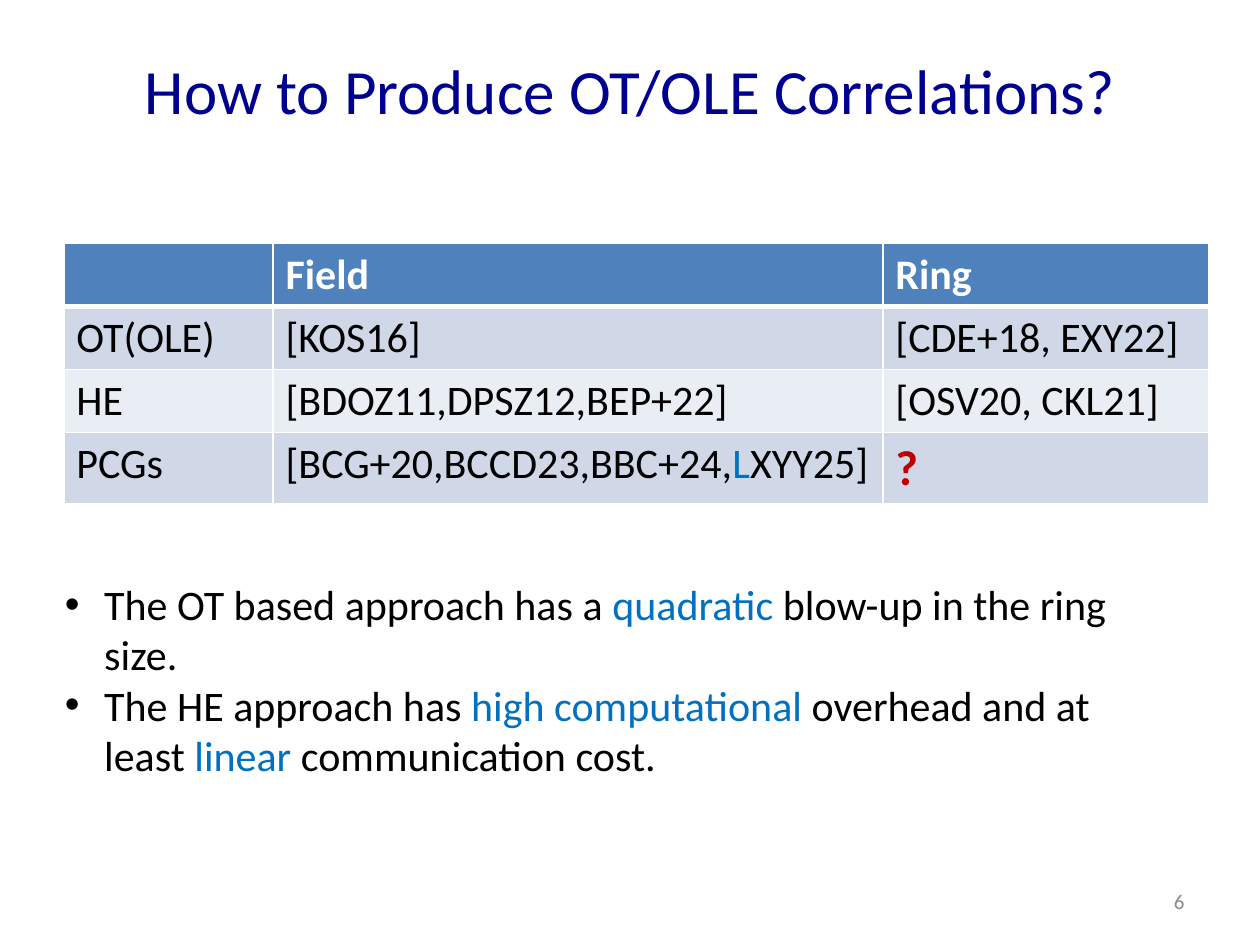
from dataclasses import dataclass

from lxml import etree
from pptx import Presentation
from pptx.dml.color import RGBColor
from pptx.enum.text import MSO_ANCHOR, PP_ALIGN
from pptx.oxml.ns import qn
from pptx.util import Pt

LEFT, CENTER, RIGHT = PP_ALIGN.LEFT, PP_ALIGN.CENTER, PP_ALIGN.RIGHT
TOP, MIDDLE = MSO_ANCHOR.TOP, MSO_ANCHOR.MIDDLE


@dataclass(frozen=True)
class Theme:
    font: str = "Calibri"
    title: str = "000090"
    text: str = "000000"
    accent: str = "0070C0"
    alert: str = "C00000"
    muted: str = "8C8C8C"
    white: str = "FFFFFF"
    header: str = "4F81BD"
    bands: tuple = ("D0D8E8", "E9EDF4")
    title_size: int = 36
    body_size: int = 24
    alert_size: int = 28
    number_size: int = 12


theme = Theme()


def add_runs(paragraph, parts, size=theme.body_size, bold=False):
    """Add (text, colour) parts to a paragraph."""
    for text, color in parts:
        run = paragraph.add_run()
        run.text = text
        run.font.name = theme.font
        run.font.size = Pt(size)
        run.font.bold = bold
        run.font.color.rgb = RGBColor.from_string(color)


def add_text_box(left, top, width, height, anchor, align, paragraphs, size):
    shape = slide.shapes.add_textbox(Pt(left), Pt(top), Pt(width), Pt(height))
    text_frame = shape.text_frame
    text_frame.word_wrap = True
    text_frame.vertical_anchor = anchor
    for index, parts in enumerate(paragraphs):
        paragraph = text_frame.add_paragraph() if index else text_frame.paragraphs[0]
        paragraph.alignment = align
        add_runs(paragraph, parts, size)
    return text_frame


presentation = Presentation()
presentation.slide_width, presentation.slide_height = Pt(720), Pt(540)
slide = presentation.slides.add_slide(presentation.slide_layouts[6])

# Title and slide number
add_text_box(36, 6, 648, 90, MIDDLE, CENTER,
             [[("How to Produce OT/OLE Correlations?", theme.title)]], theme.title_size)
add_text_box(516, 500.5, 168, 28.75, MIDDLE, RIGHT,
             [[("6", theme.muted)]], theme.number_size)

# Remarks with bullets
remarks = [
    [("The OT based approach has a ", theme.text), ("quadratic", theme.accent),
     (" blow-up in the ring size.", theme.text)],
    [("The HE approach has ", theme.text), ("high computational ", theme.accent),
     ("overhead and at least ", theme.text), ("linear", theme.accent),
     (" communication cost.", theme.text)],
]
remarks_frame = add_text_box(30, 327, 642, 124, TOP, LEFT, remarks, theme.body_size)
for paragraph in remarks_frame.paragraphs:
    properties = paragraph._p.get_or_add_pPr()
    properties.set("marL", str(Pt(22.5)))
    properties.set("indent", str(Pt(-22.5)))
    etree.SubElement(properties, qn("a:buFont"), typeface="Arial")
    etree.SubElement(properties, qn("a:buChar"), char="•")

# Table of protocols by approach
rows = [
    ["", "Field", "Ring"],
    ["OT(OLE)", "[KOS16]", "[CDE+18, EXY22]"],
    ["HE", "[BDOZ11,DPSZ12,BEP+22]", "[OSV20, CKL21]"],
    ["PCGs", "[BCG+20,BCCD23,BBC+24,LXYY25]", "?"],
]
column_widths = [119.5, 348.5, 186]
row_heights = [36, 36, 36, 40]
table = slide.shapes.add_table(
    len(rows), len(column_widths), Pt(36.5), Pt(139),
    Pt(sum(column_widths)), Pt(sum(row_heights))).table
for column, width in zip(table.columns, column_widths):
    column.width = Pt(width)
for row, height in zip(table.rows, row_heights):
    row.height = Pt(height)

for row_index, row in enumerate(rows):
    is_header = row_index == 0
    fill = theme.header if is_header else theme.bands[(row_index - 1) % 2]
    borders = {"L": 1, "R": 1, "T": 3 if row_index == 1 else 1, "B": 3 if is_header else 1}
    for column_index, text in enumerate(row):
        cell = table.cell(row_index, column_index)

        # White borders, thicker under the header
        cell_properties = cell._tc.get_or_add_tcPr()
        for side, width in borders.items():
            line = etree.SubElement(cell_properties, qn(f"a:ln{side}"), w=str(Pt(width)))
            line_fill = etree.SubElement(line, qn("a:solidFill"))
            etree.SubElement(line_fill, qn("a:srgbClr"), val=theme.white)
        cell.fill.solid()
        cell.fill.fore_color.rgb = RGBColor.from_string(fill)

        # Cell text, with the open question and one initial picked out
        paragraph = cell.text_frame.paragraphs[0]
        before, initial, after = text.partition("LXYY25")
        if text == "?":
            add_runs(paragraph, [(text, theme.alert)], theme.alert_size, bold=True)
        elif initial:
            add_runs(paragraph, [(before, theme.text), (initial[0], theme.accent),
                                 (initial[1:] + after, theme.text)])
        elif text:
            add_runs(paragraph, [(text, theme.white if is_header else theme.text)],
                     bold=is_header)

presentation.save("out.pptx")
